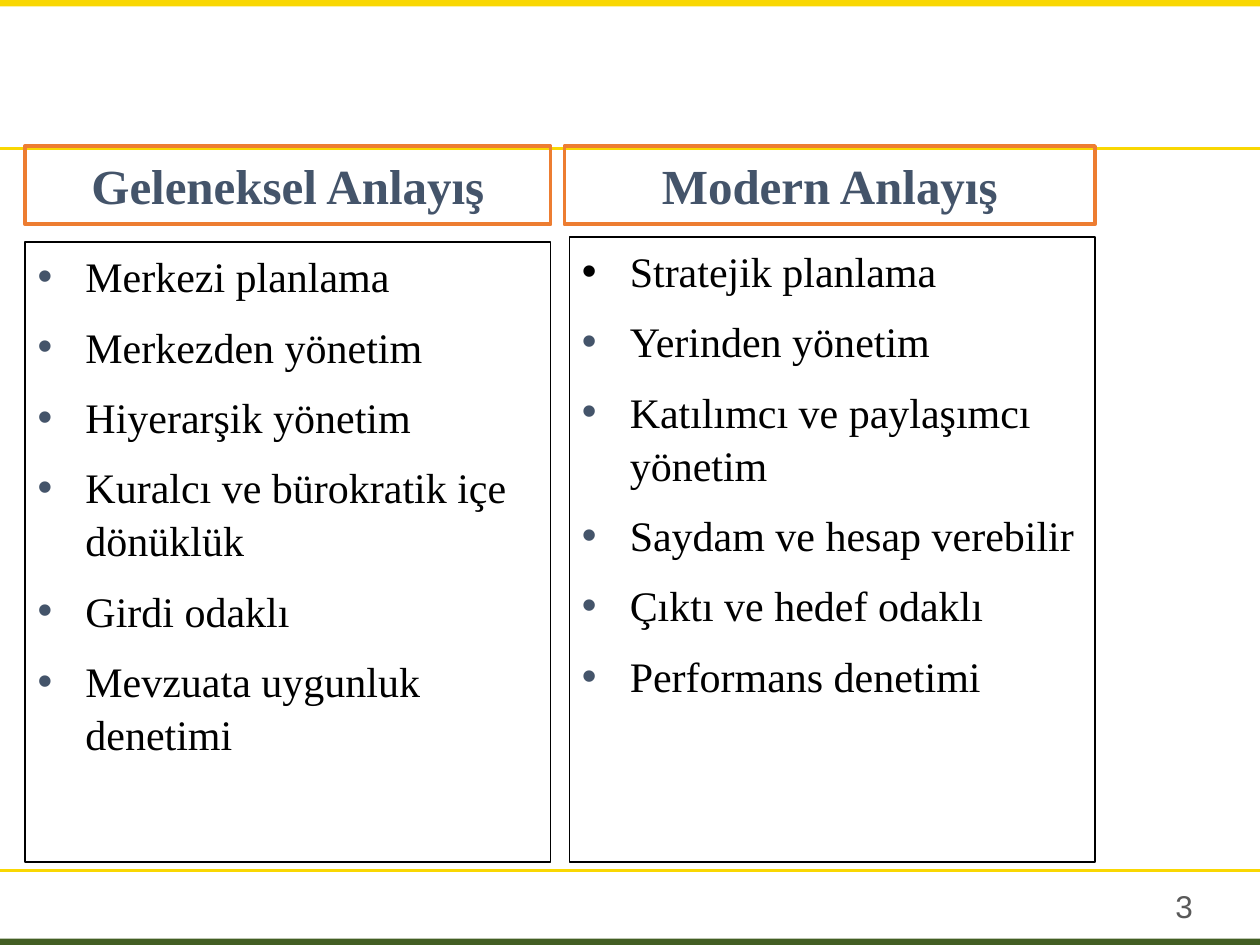
from lxml import etree
from pptx import Presentation
from pptx.dml.color import RGBColor
from pptx.enum.shapes import MSO_CONNECTOR, MSO_SHAPE
from pptx.enum.text import MSO_ANCHOR, PP_ALIGN
from pptx.oxml.ns import qn
from pptx.util import Inches, Pt

RECTANGLE = MSO_SHAPE.RECTANGLE
STRAIGHT = MSO_CONNECTOR.STRAIGHT
TOP, MIDDLE = MSO_ANCHOR.TOP, MSO_ANCHOR.MIDDLE
LEFT, CENTER = PP_ALIGN.LEFT, PP_ALIGN.CENTER

WIDTH, HEIGHT = 10, 7.5
BAND = 0.05
INDENT = 0.38
YELLOW, GREEN, ORANGE = "F9D702", "435E23", "ED7D31"
SLATE, BLACK, WHITE, GREY = "44546A", "000000", "FFFFFF", "595959"
SERIF, SANS = "Times New Roman", "Arial"

TRADITIONAL = ["Merkezi planlama", "Merkezden yönetim", "Hiyerarşik yönetim",
               "Kuralcı ve bürokratik içe dönüklük", "Girdi odaklı",
               "Mevzuata uygunluk denetimi"]
MODERN = ["Stratejik planlama", "Yerinden yönetim",
          "Katılımcı ve paylaşımcı yönetim", "Saydam ve hesap verebilir",
          "Çıktı ve hedef odaklı", "Performans denetimi"]


def color(value):
    """Turn a hex string into a colour."""
    return RGBColor.from_string(value)


def add_panel(page, box, fill=None, line=None, weight=1):
    """Add a rectangle with an optional fill and outline."""
    panel = page.shapes.add_shape(RECTANGLE, *map(Inches, box))
    panel.shadow.inherit = False
    if fill:
        panel.fill.solid()
        panel.fill.fore_color.rgb = color(fill)
    else:
        panel.fill.background()
    if line:
        panel.line.color.rgb = color(line)
        panel.line.width = Pt(weight)
    else:
        panel.line.fill.background()
    return panel


def add_rule(page, y):
    """Draw a yellow line across the page."""
    rule = page.shapes.add_connector(
        STRAIGHT, 0, Inches(y), Inches(WIDTH), Inches(y))
    rule.line.color.rgb = color(YELLOW)
    rule.line.width = Pt(1.5)
    etree.SubElement(rule._element.spPr, qn("a:effectLst"))


def add_bullet(para, tint):
    """Give a paragraph a hanging round bullet in the given colour."""
    props = para._p.get_or_add_pPr()
    props.set("marL", str(Inches(INDENT)))
    props.set("indent", str(-Inches(INDENT)))
    bullet_color = etree.SubElement(props, qn("a:buClr"))
    etree.SubElement(bullet_color, qn("a:srgbClr"), val=tint)
    etree.SubElement(props, qn("a:buFont"), typeface=SANS)
    etree.SubElement(props, qn("a:buChar"), char="•")


def write(shape, lines, size=24, font=SERIF, tint=BLACK, bold=False,
          align=LEFT, anchor=TOP, bullets=None, gap=0, spacing=1):
    """Write lines of text into a shape with the given format."""
    frame = shape.text_frame
    frame.word_wrap = True
    frame.vertical_anchor = anchor
    for index, text in enumerate(lines):
        para = frame.add_paragraph() if index else frame.paragraphs[0]
        para.alignment = align
        para.line_spacing = spacing
        para.space_before = Pt(gap if index else 0)
        if bullets:
            add_bullet(para, bullets[index])
        span = para.add_run()
        span.text = text
        span.font.size = Pt(size)
        span.font.name = font
        span.font.bold = bold
        span.font.color.rgb = color(tint)


def add_frame(page, box, number):
    """Draw the bands, the rules and the page number."""
    left, top, width, height = box
    add_panel(page, (left, top, width, BAND), fill=YELLOW)
    add_panel(page, (left, top + height - BAND, width, BAND), fill=GREEN)
    add_rule(page, top + 1.18)
    add_rule(page, top + height - 0.59)
    label = page.shapes.add_textbox(
        *map(Inches, (left + width - 0.77, top + height - 0.51, 0.77, 0.4)))
    write(label, [number], size=18, font=SANS, tint=GREY)


def add_column(page, box, title, items, head_width, body_top, first_bullet):
    """Place a heading and its bullet list, aligned to the box's right edge."""
    left, top, width, height = box
    right = left + width
    body = add_panel(page, (left, body_top, width, top + height - body_top),
                     fill=WHITE, line=BLACK)
    write(body, items, gap=10, spacing=1.05,
          bullets=[first_bullet] + [SLATE] * (len(items) - 1))
    head = add_panel(page, (right - head_width, top, head_width, 0.62),
                     line=ORANGE, weight=2.25)
    write(head, [title], size=28, tint=SLATE, bold=True,
          align=CENTER, anchor=MIDDLE)


def main():
    """Build the comparison slide and save it."""
    deck = Presentation()
    deck.slide_width, deck.slide_height = Inches(WIDTH), Inches(HEIGHT)
    page = deck.slides.add_slide(deck.slide_layouts[6])
    add_frame(page, (0, 0, WIDTH, HEIGHT), "3")
    add_column(page, (0.2, 1.16, 4.17, 5.68), "Geleneksel Anlayış",
               TRADITIONAL, 4.17, 1.92, SLATE)
    add_column(page, (4.52, 1.16, 4.17, 5.68), "Modern Anlayış",
               MODERN, 4.21, 1.88, BLACK)
    deck.save("out.pptx")


if __name__ == "__main__":
    main()
